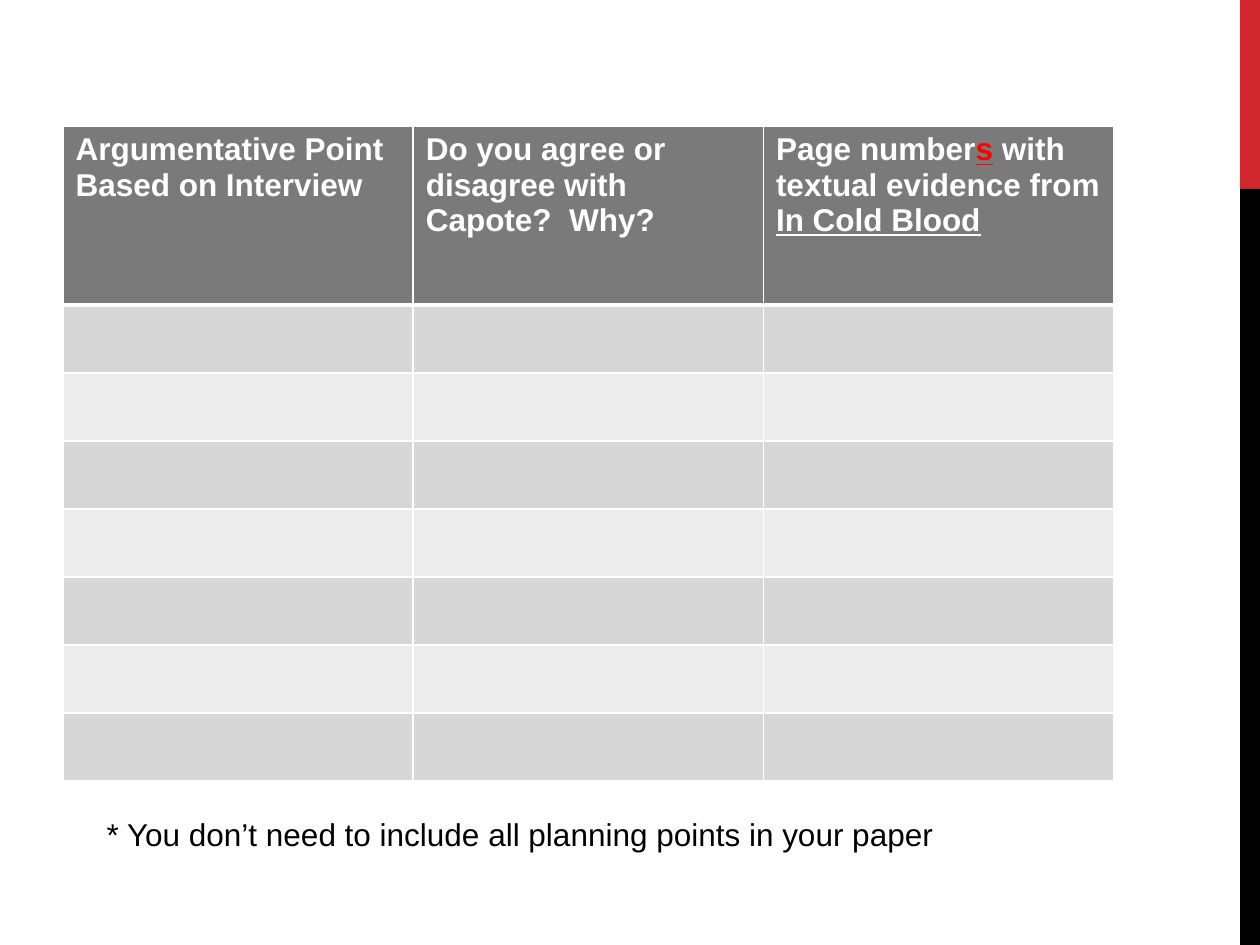
from dataclasses import dataclass

from lxml import etree
from pptx import Presentation
from pptx.dml.color import RGBColor
from pptx.enum.shapes import MSO_SHAPE
from pptx.oxml.ns import qn
from pptx.util import Cm, Pt

RECTANGLE = MSO_SHAPE.RECTANGLE
COLORS = {
    "white": "FFFFFF",
    "black": "000000",
    "accent": "D1282E",
    "plural": "FF0000",
    "header": "7A7A7A",
    "odd_row": "D7D7D7",
    "even_row": "ECECEC",
}
BODY_ROWS = 7
HEADER_HEIGHT, ROW_HEIGHT = 3.61, 1.37
COLUMN_WIDTH = 7.06
THIN, THICK = 1, 3


@dataclass
class Band:
    top: float
    height: float
    color: str


@dataclass
class Phrase:
    text: str
    color: str = "white"
    bold: bool = True
    underline: bool = False


SIDE_BANDS = [Band(0, 3.81, "accent"), Band(3.81, 15.24, "black")]
HEADERS = [
    [[Phrase("Argumentative Point")], [Phrase("Based on Interview")]],
    [[Phrase("Do you agree or disagree with Capote?  Why?")]],
    [[
        Phrase("Page number"),
        Phrase("s", color="plural", underline=True),
        Phrase(" with textual evidence from "),
        Phrase("In Cold Blood", underline=True),
    ]],
]
FOOTNOTE = [[Phrase("* You don’t need to include all planning points in your paper",
                    color="black", bold=False)]]


def rgb(color: str) -> RGBColor:
    return RGBColor.from_string(COLORS[color])


def write(frame, paragraphs: list[list[Phrase]]) -> None:
    for index, phrases in enumerate(paragraphs):
        paragraph = frame.paragraphs[0] if index == 0 else frame.add_paragraph()
        for phrase in phrases:
            run = paragraph.add_run()
            run.text = phrase.text
            font_format = {"name": "Arial", "size": Pt(18), "bold": phrase.bold,
                           "underline": phrase.underline}
            for attribute, value in font_format.items():
                setattr(run.font, attribute, value)
            run.font.color.rgb = rgb(phrase.color)


def draw_band(slide, band: Band) -> None:
    bar = slide.shapes.add_shape(RECTANGLE, Cm(25), Cm(band.top), Cm(0.4), Cm(band.height))
    bar.shadow.inherit = False
    bar.fill.solid()
    bar.fill.fore_color.rgb = rgb(band.color)
    bar.line.fill.background()


def style_cell(cell, color: str, top: float, bottom: float) -> None:
    """Give the cell white borders (widths in points) and a solid fill."""
    properties = cell._tc.get_or_add_tcPr()
    for side, width in {"lnL": THIN, "lnR": THIN, "lnT": top, "lnB": bottom}.items():
        border = etree.SubElement(properties, qn(f"a:{side}"), w=str(Pt(width)))
        fill = etree.SubElement(border, qn("a:solidFill"))
        etree.SubElement(fill, qn("a:srgbClr"), val=COLORS["white"])
    cell.fill.solid()
    cell.fill.fore_color.rgb = rgb(color)


def draw_planning_table(slide) -> None:
    columns = len(HEADERS)
    table = slide.shapes.add_table(
        BODY_ROWS + 1, columns, Cm(1.27), Cm(2.54),
        Cm(columns * COLUMN_WIDTH), Cm(HEADER_HEIGHT + BODY_ROWS * ROW_HEIGHT)).table
    for column in table.columns:
        column.width = Cm(COLUMN_WIDTH)
    for index, row in enumerate(table.rows):
        row.height = Cm(ROW_HEIGHT if index else HEADER_HEIGHT)
        color = "header" if index == 0 else "odd_row" if index % 2 else "even_row"
        for cell in row.cells:
            style_cell(cell, color, top=THICK if index == 1 else THIN,
                       bottom=THICK if index == 0 else THIN)
    for cell, paragraphs in zip(table.rows[0].cells, HEADERS):
        write(cell.text_frame, paragraphs)


def draw_footnote(slide) -> None:
    footnote = slide.shapes.add_textbox(Cm(1.9), Cm(16.3), Cm(20.53), Cm(1.02))
    footnote.text_frame.word_wrap = True
    write(footnote.text_frame, FOOTNOTE)


def main() -> None:
    presentation = Presentation()
    presentation.slide_width, presentation.slide_height = Cm(25.4), Cm(19.05)
    slide = presentation.slides.add_slide(presentation.slide_layouts[6])
    for band in SIDE_BANDS:
        draw_band(slide, band)
    draw_planning_table(slide)
    draw_footnote(slide)
    presentation.save("out.pptx")


if __name__ == "__main__":
    main()
